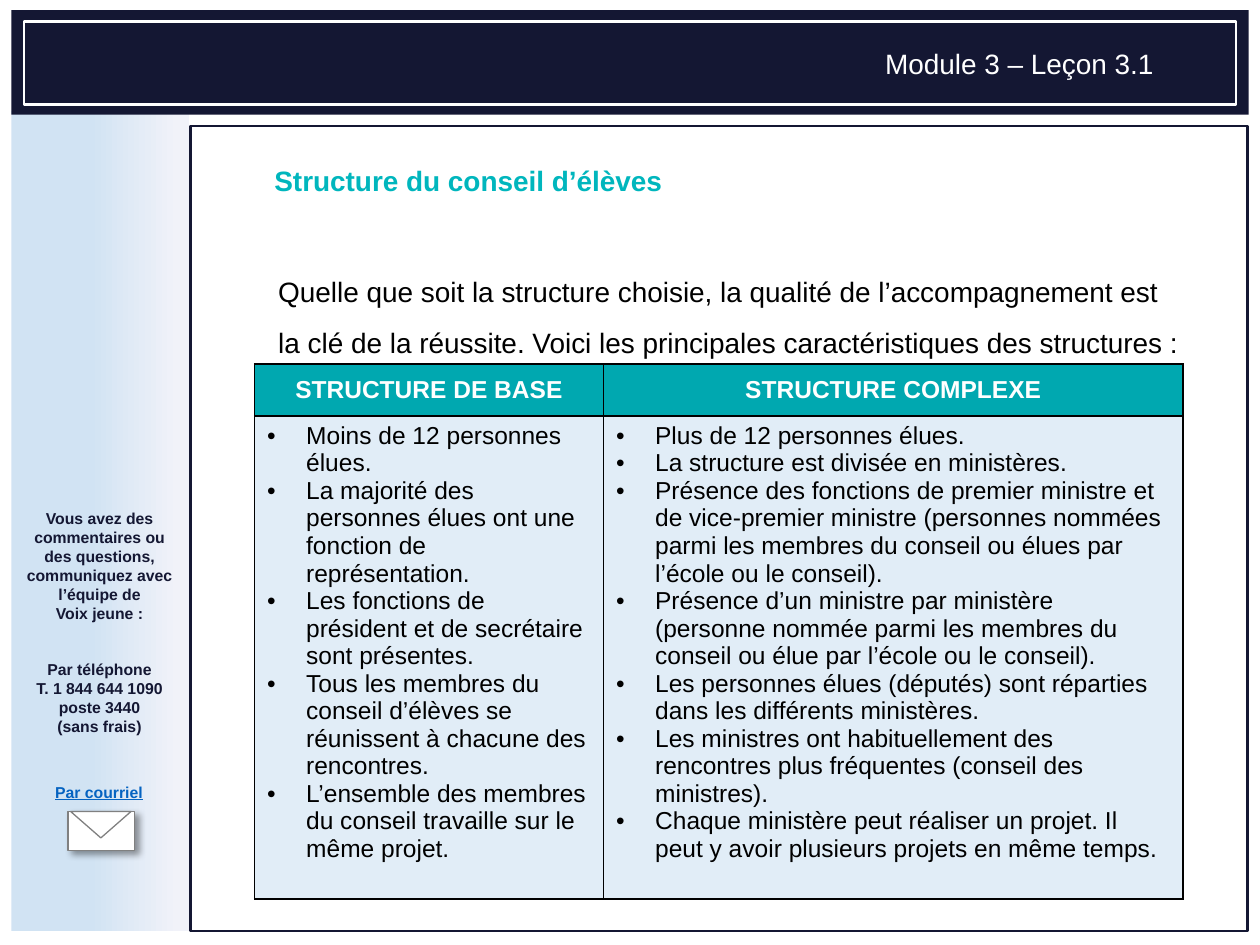
from lxml import etree
from pptx import Presentation
from pptx.dml.color import RGBColor
from pptx.enum.shapes import MSO_SHAPE
from pptx.enum.text import MSO_ANCHOR, PP_ALIGN
from pptx.oxml import parse_xml
from pptx.oxml.ns import nsdecls, qn
from pptx.util import Inches, Pt

COLORS = {
    "navy": "141733", "white": "FFFFFF", "black": "000000", "gray": "808080",
    "teal": "00A8B0", "heading": "00B6BD", "link": "0563C1", "cell": "E1EDF7",
    "side_left": "D1E3F3", "side_right": "F1F2F9",
}


def color(name):
    return RGBColor.from_string(COLORS[name])


def write(frame, paragraphs, formats, align=PP_ALIGN.LEFT):
    """Fill a text frame, giving every paragraph the same font and alignment."""
    for index, text in enumerate(paragraphs):
        paragraph = frame.paragraphs[0] if index == 0 else frame.add_paragraph()
        paragraph.text = text
        paragraph.alignment = align
        for run in paragraph.runs:
            run.font.name = "Arial"
            run.font.color.rgb = color(formats["color"])
            for name in ("size", "bold", "underline"):
                if name in formats:
                    setattr(run.font, name, formats[name])


presentation = Presentation()
presentation.slide_width = Inches(10)
presentation.slide_height = Inches(7.5)
slide = presentation.slides.add_slide(presentation.slide_layouts[6])

# Frame, banner and envelope: kind, place, fill, line, line width
shape_rows = {
    "sidebar": (MSO_SHAPE.RECTANGLE, (0.09, 0.88, 1.41, 6.51), "side_left", None, 0),
    "content frame": (MSO_SHAPE.RECTANGLE, (1.51, 1, 8.39, 6.39), None, "navy", 1.5),
    "banner": (MSO_SHAPE.RECTANGLE, (0.09, 0.08, 9.82, 0.83), "navy", None, 0),
    "banner border": (MSO_SHAPE.RECTANGLE, (0.19, 0.17, 9.62, 0.66), None, "white", 1.5),
    "envelope": (MSO_SHAPE.RECTANGLE, (0.54, 6.44, 0.53, 0.31), "white", "gray", 0.75),
    "envelope flap": (MSO_SHAPE.ISOSCELES_TRIANGLE, (0.56, 6.44, 0.48, 0.21), "white", "gray", 0.75),
}
shapes = {}
for name, (kind, place, fill, line, width) in shape_rows.items():
    shape = slide.shapes.add_shape(kind, *map(Inches, place))
    shape.shadow.inherit = False
    if fill:
        shape.fill.solid()
        shape.fill.fore_color.rgb = color(fill)
    else:
        shape.fill.background()
    if line:
        shape.line.color.rgb = color(line)
        shape.line.width = Pt(width)
    else:
        shape.line.fill.background()
    shapes[name] = shape

sidebar_fill = shapes["sidebar"].fill
sidebar_fill.gradient()
sidebar_fill.gradient_angle = 0
for stop, name, position in zip(sidebar_fill.gradient_stops, ("side_left", "side_right"), (0.44, 0.94)):
    stop.color.rgb = color(name)
    stop.position = position

shapes["envelope flap"].rotation = 180
effects = shapes["envelope"]._element.spPr.find(qn("a:effectLst"))
effects.append(parse_xml(
    f'<a:outerShdw {nsdecls("a")} blurRad="{Pt(4)}" dist="{Pt(3)}" dir="2700000" algn="tl" rotWithShape="0">'
    f'<a:srgbClr val="{COLORS["black"]}"><a:alpha val="40000"/></a:srgbClr></a:outerShdw>'))

# Text boxes: place, paragraphs, font formats, alignment, anchor, wrap
contact = [
    "Vous avez des commentaires ou des questions, communiquez avec l’équipe de\vVoix jeune :",
    "Par téléphone\vT. 1 844 644 1090\vposte 3440\v(sans frais)",
]
introduction = ("Quelle que soit la structure choisie, la qualité de l’accompagnement est la clé de la "
                "réussite. Voici les principales caractéristiques des structures :")
text_rows = [
    ((0.09, 3.99, 1.4, 1.92), contact, {"size": Pt(9), "bold": True, "color": "navy"},
     PP_ALIGN.CENTER, MSO_ANCHOR.TOP, True),
    ((2.08, 1.27, 3.33, 0.33), ["Structure du conseil d’élèves"],
     {"size": Pt(16), "bold": True, "color": "heading"}, PP_ALIGN.LEFT, MSO_ANCHOR.MIDDLE, True),
    ((6.88, 0.32, 2.42, 0.37), ["Module 3 – Leçon 3.1"], {"size": Pt(16), "color": "white"},
     PP_ALIGN.CENTER, MSO_ANCHOR.TOP, True),
    ((0.34, 6.16, 0.9, 0.25), ["Par courriel"],
     {"size": Pt(9), "bold": True, "underline": True, "color": "link"},
     PP_ALIGN.LEFT, MSO_ANCHOR.TOP, False),
    ((2.11, 2, 7.37, 0.89), [introduction], {"size": Pt(16), "color": "black"},
     PP_ALIGN.LEFT, MSO_ANCHOR.TOP, True),
]
frames = []
for place, paragraphs, formats, align, anchor, wrap in text_rows:
    frame = slide.shapes.add_textbox(*map(Inches, place)).text_frame
    frame.word_wrap = wrap
    frame.vertical_anchor = anchor
    write(frame, paragraphs, formats, align)
    frames.append(frame)
frames[0].paragraphs[1].space_before = Pt(21)
frames[-1].paragraphs[0].line_spacing = 1.5

# Comparison table
columns = {
    "STRUCTURE DE BASE": (2.77, [
        "Moins de 12 personnes élues.",
        "La majorité des personnes élues ont une fonction de représentation.",
        "Les fonctions de président et de secrétaire sont présentes.",
        "Tous les membres du conseil d’élèves se réunissent à chacune des rencontres.",
        "L’ensemble des membres du conseil travaille sur le même projet.",
    ]),
    "STRUCTURE COMPLEXE": (4.6, [
        "Plus de 12 personnes élues.",
        "La structure est divisée en ministères.",
        "Présence des fonctions de premier ministre et de vice-premier ministre (personnes nommées "
        "parmi les membres du conseil ou élues par l’école ou le conseil).",
        "Présence d’un ministre par ministère (personne nommée parmi les membres du conseil ou élue "
        "par l’école ou le conseil).",
        "Les personnes élues (députés) sont réparties dans les différents ministères.",
        "Les ministres ont habituellement des rencontres plus fréquentes (conseil des ministres).",
        "Chaque ministère peut réaliser un projet. Il peut y avoir plusieurs projets en même temps.",
    ]),
}
table_frame = slide.shapes.add_table(2, 2, Inches(2.02), Inches(2.89), Inches(7.37), Inches(0.82))
table = table_frame.table
table.horz_banding = False
for column, (heading, (width, points)) in enumerate(columns.items()):
    table.columns[column].width = Inches(width)
    header, body = table.cell(0, column), table.cell(1, column)
    header.vertical_anchor = MSO_ANCHOR.MIDDLE
    write(header.text_frame, [heading], {"size": Pt(14), "bold": True, "color": "white"}, PP_ALIGN.CENTER)
    write(body.text_frame, points, {"size": Pt(14), "bold": False, "color": "black"})
    for paragraph in body.text_frame.paragraphs:
        properties = paragraph._p.get_or_add_pPr()
        properties.set("marL", str(Inches(0.31)))
        properties.set("indent", str(-Inches(0.31)))
        bullet_color = etree.SubElement(properties, qn("a:buClr"))
        etree.SubElement(bullet_color, qn("a:srgbClr"), val=COLORS["black"])
        etree.SubElement(properties, qn("a:buFont"), typeface="Arial")
        etree.SubElement(properties, qn("a:buChar"), char="•")
    for cell, fill in ((header, "teal"), (body, "cell")):
        cell.fill.solid()
        cell.fill.fore_color.rgb = color(fill)
        for position, side in enumerate(("lnL", "lnR", "lnT", "lnB")):
            cell._tc.get_or_add_tcPr().insert(position, parse_xml(
                f'<a:{side} {nsdecls("a")} w="{Pt(1)}"><a:solidFill>'
                f'<a:srgbClr val="{COLORS["black"]}"/></a:solidFill></a:{side}>'))
table_frame.height = Inches(4.24)

presentation.save("out.pptx")
